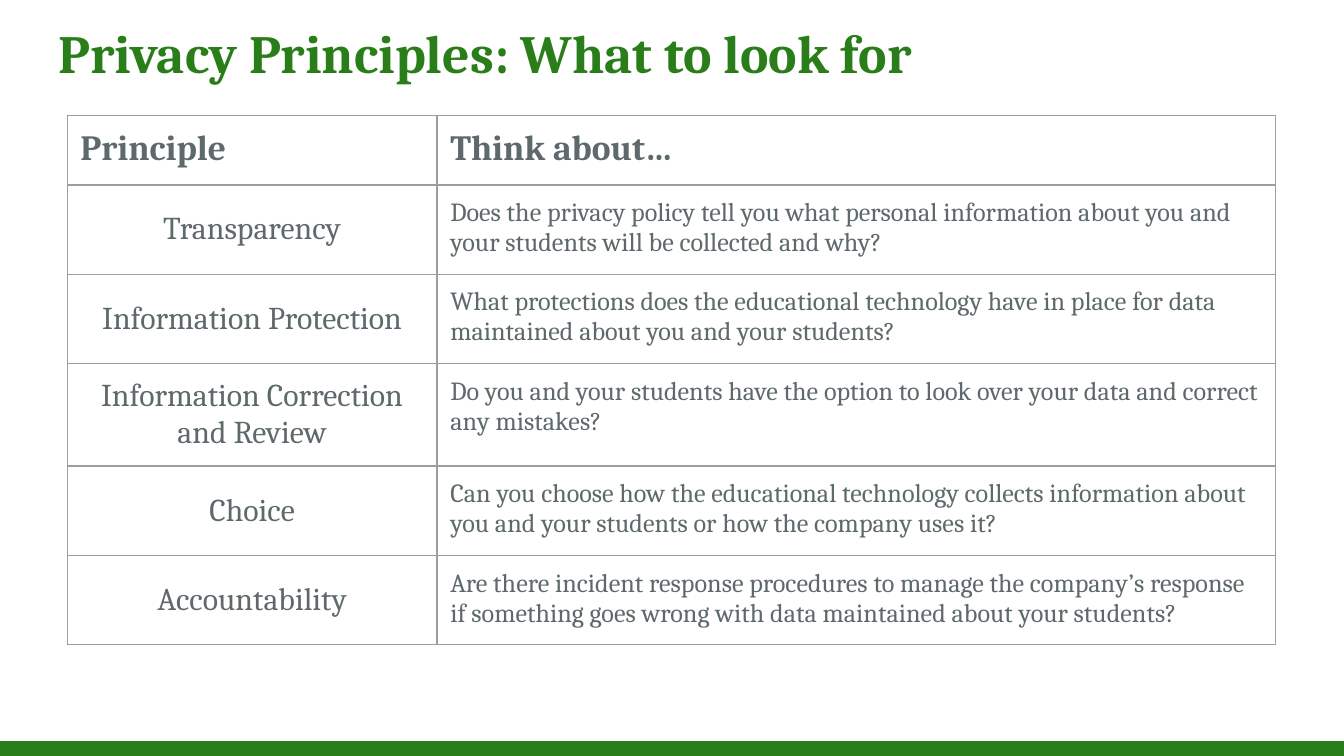
"""Build a slide with a table of privacy principles."""
from lxml import etree
from pptx import Presentation
from pptx.dml.color import RGBColor
from pptx.enum import shapes, text
from pptx.oxml import ns
from pptx.util import Cm, Pt

TITLE = "Privacy Principles: What to look for"
HEAD = ("Principle", "Think about…")
ROWS = [
    ("Transparency",
     "Does the privacy policy tell you what personal information about you and "
     "your students will be collected and why?"),
    ("Information Protection",
     "What protections does the educational technology have in place for data "
     "maintained about you and your students?"),
    ("Information Correction and Review",
     "Do you and your students have the option to look over your data and "
     "correct any mistakes?"),
    ("Choice",
     "Can you choose how the educational technology collects information about "
     "you and your students or how the company uses it?"),
    ("Accountability",
     "Are there incident response procedures to manage the company’s response "
     "if something goes wrong with data maintained about your students?"),
]
WIDTHS = (6.99, 15.85)
HEIGHTS = (1.26, 1.64, 1.64, 1.89, 1.64, 1.64)
SIZES = (17, 14)
PAD = Cm(0.25)
FONT = "Cambria"
GREEN = RGBColor(0x2A, 0x7E, 0x19)
GREY = RGBColor(0x5E, 0x69, 0x6C)
LINE = RGBColor(0x9E, 0x9E, 0x9E)


def style(para, size, color, bold=False):
    for run in para.runs:
        font = run.font
        font.name, font.size, font.bold = FONT, Pt(size), bold
        font.color.rgb = color


def pad(box):
    box.margin_left = box.margin_right = PAD
    box.margin_top = box.margin_bottom = PAD


def frame(cell):
    props = cell._tc.get_or_add_tcPr()
    for i, side in enumerate(("lnL", "lnR", "lnT", "lnB")):
        line = etree.Element(ns.qn("a:" + side), w=str(Pt(0.75)))
        fill = etree.SubElement(line, ns.qn("a:solidFill"))
        etree.SubElement(fill, ns.qn("a:srgbClr"), val=str(LINE))
        props.insert(i, line)


def add_title(slide):
    box = slide.shapes.add_textbox(Cm(0.86), Cm(0.13), Cm(23.67), Cm(1.73))
    frame_ = box.text_frame
    frame_.word_wrap = True
    pad(frame_)
    frame_.text = TITLE
    style(frame_.paragraphs[0], 28.8, GREEN, True)


def add_grid(slide):
    data = [HEAD] + ROWS
    grid = slide.shapes.add_table(
        len(data), len(HEAD), Cm(1.27), Cm(2.19),
        Cm(sum(WIDTHS)), Cm(sum(HEIGHTS))).table
    for col, width in zip(grid.columns, WIDTHS):
        col.width = Cm(width)
    for r, (row, height) in enumerate(zip(data, HEIGHTS)):
        grid.rows[r].height = Cm(height)
        for c, words in enumerate(row):
            cell = grid.cell(r, c)
            cell.text = words
            cell.fill.background()
            pad(cell)
            frame(cell)
            para = cell.text_frame.paragraphs[0]
            style(para, SIZES[c] if r else 19, GREY, r == 0)
            if r and c == 0:
                para.alignment = text.PP_ALIGN.CENTER
                cell.vertical_anchor = text.MSO_ANCHOR.MIDDLE


def main():
    deck = Presentation()
    deck.slide_width, deck.slide_height = Cm(25.4), Cm(14.29)
    slide = deck.slides.add_slide(deck.slide_layouts[6])
    bar = slide.shapes.add_shape(
        shapes.MSO_SHAPE.RECTANGLE, 0, Cm(14.01), deck.slide_width, Cm(0.28))
    bar.shadow.inherit = False
    bar.fill.solid()
    bar.fill.fore_color.rgb = GREEN
    bar.line.fill.background()
    add_title(slide)
    add_grid(slide)
    deck.save("out.pptx")


if __name__ == "__main__":
    main()
